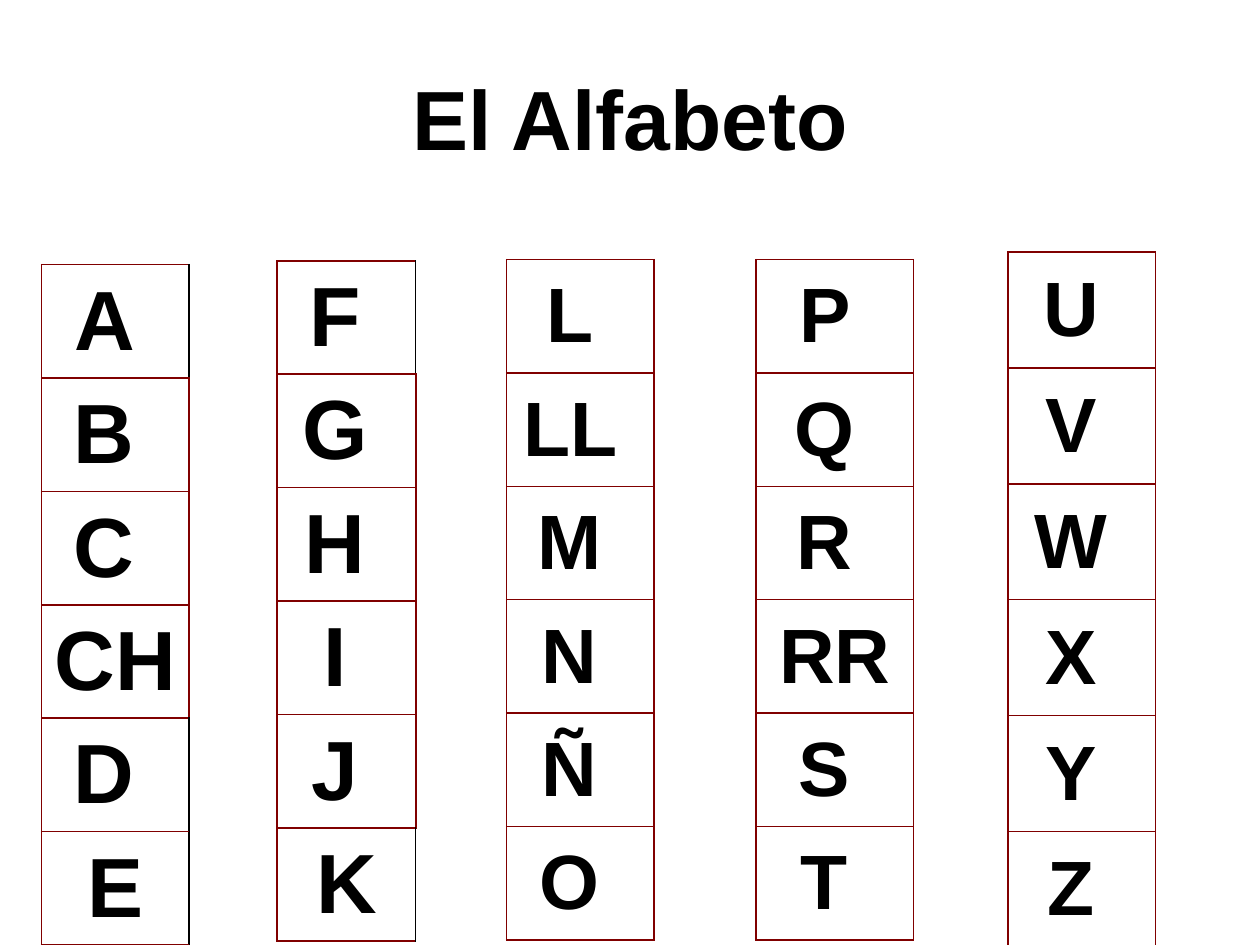
from lxml import etree
from pptx import Presentation
from pptx.dml.color import RGBColor
from pptx.enum.text import MSO_ANCHOR, PP_ALIGN
from pptx.oxml.ns import qn
from pptx.util import Inches, Pt

MIDDLE = MSO_ANCHOR.MIDDLE
CENTER = PP_ALIGN.CENTER
BLACK = RGBColor(0x00, 0x00, 0x00)
MAROON = RGBColor(0x80, 0x00, 0x00)
INDENT = Inches(0.38)

# left, top, width, row height, text size, letters, letters with a black right edge
COLUMNS = [
    (0.33, 2.1, 1.17, 0.9, 48, ["A ", "B ", "C ", "CH ", "D ", "E"], ["A ", "D ", "E"]),
    (2.2, 2.07, 1.1, 0.9, 48, ["F ", "G ", "H ", "I ", "J ", "K"], ["F ", "K"]),
    (4.02, 2.06, 1.17, 0.9, 44, ["L ", "LL ", "M ", "N ", "Ñ ", "O "], []),
    (6, 2.06, 1.25, 0.9, 44, ["P ", "Q ", "R ", "RR ", "S ", "T "], []),
    (8, 2, 1.17, 0.92, 44, ["U ", "V ", "W ", "X ", "Y ", "Z "], []),
]


class Deck:
    def __init__(self, font):
        self.font = font
        self.prs = Presentation()
        self.prs.slide_width = Inches(10)
        self.prs.slide_height = Inches(7.5)
        self.slide = self.prs.slides.add_slide(self.prs.slide_layouts[5])

    def style(self, para, size):
        para.alignment = CENTER
        para.font.name = self.font
        para.font.size = Pt(size)
        para.font.bold = True
        para.font.color.rgb = BLACK

    def title(self, text, left, top, width, height, size):
        box = self.slide.shapes.title
        box.left, box.top = Inches(left), Inches(top)
        box.width, box.height = Inches(width), Inches(height)
        frame = box.text_frame
        frame.text = text
        frame.vertical_anchor = MIDDLE
        self.style(frame.paragraphs[0], size)

    def border(self, cell, right):
        """Draw a maroon frame, whose right edge may be black."""
        props = cell._tc.get_or_add_tcPr()
        for spot, side in enumerate("LRTB"):
            dark = side == "R" and right == BLACK
            width = Pt(0.75 if dark else 1)
            line = etree.Element(qn(f"a:ln{side}"), w=str(width))
            fill = etree.SubElement(line, qn("a:solidFill"))
            color = BLACK if dark else MAROON
            etree.SubElement(fill, qn("a:srgbClr"), val=str(color))
            props.insert(spot, line)

    def column(self, left, top, width, step, size, letters, dark):
        count = len(letters)
        table = self.slide.shapes.add_table(
            count, 1, Inches(left), Inches(top), Inches(width), Inches(step * count)
        ).table
        table.first_row = False
        table.horz_banding = False
        for row, letter in enumerate(letters):
            table.rows[row].height = Inches(step)
            cell = table.cell(row, 0)
            cell.text = letter
            cell.vertical_anchor = MIDDLE
            cell.fill.background()
            para = cell.text_frame.paragraphs[0]
            self.style(para, size)
            props = para._p.get_or_add_pPr()
            props.set("marL", str(INDENT))
            props.set("indent", str(-INDENT))
            self.border(cell, BLACK if letter in dark else MAROON)


def main():
    deck = Deck("Arial")
    deck.title("El Alfabeto", 0.5, 0.3, 9, 1.25, 48)
    for column in COLUMNS:
        deck.column(*column)
    deck.prs.save("out.pptx")


if __name__ == "__main__":
    main()
